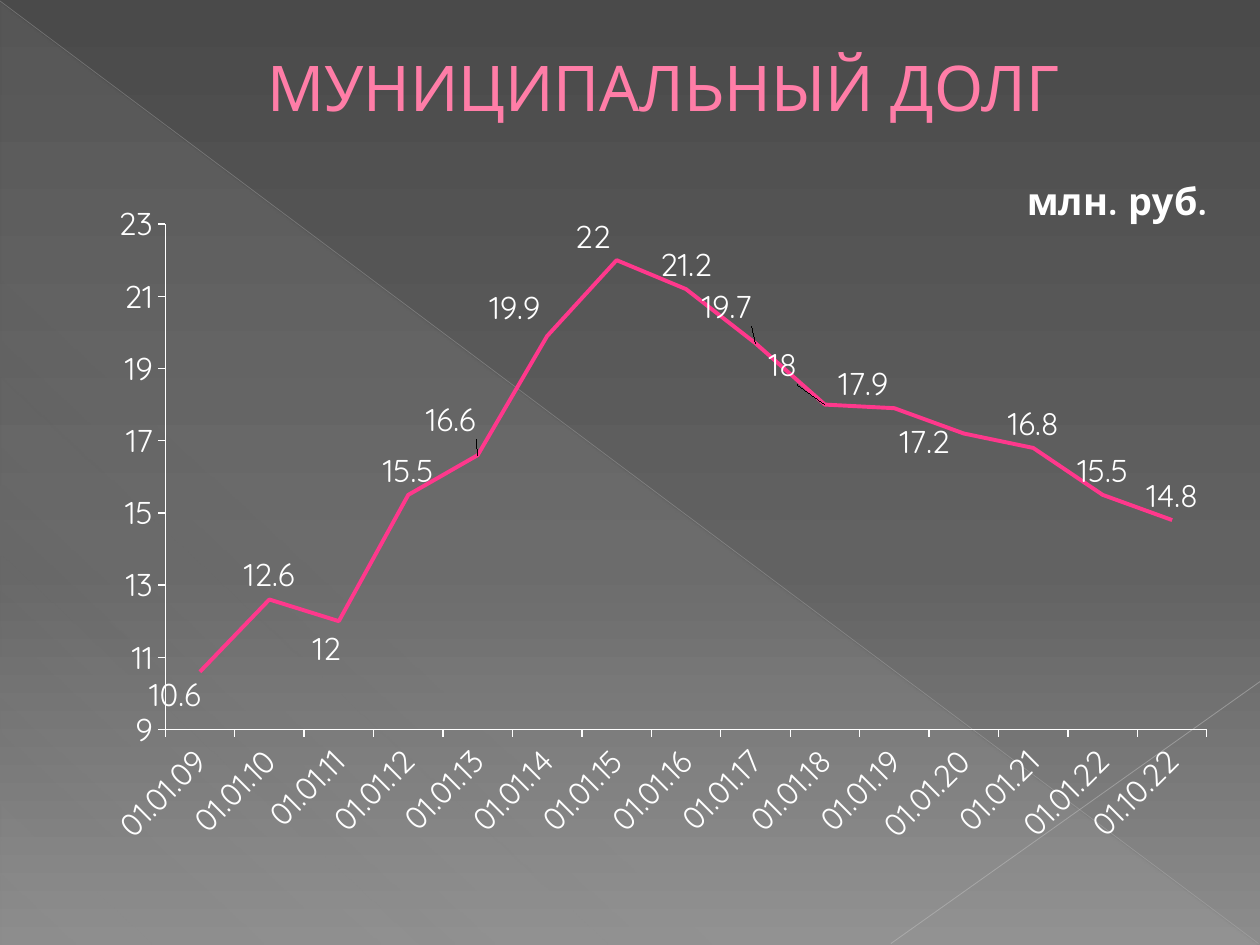
from dataclasses import dataclass

from lxml import etree
from pptx import Presentation
from pptx.chart.data import CategoryChartData
from pptx.dml.color import RGBColor
from pptx.enum.chart import XL_CHART_TYPE, XL_LABEL_POSITION, XL_TICK_MARK
from pptx.enum.shapes import MSO_CONNECTOR, MSO_SHAPE
from pptx.enum.text import MSO_ANCHOR, PP_ALIGN
from pptx.oxml.ns import qn
from pptx.util import Cm, Pt

LINE_CHART = XL_CHART_TYPE.LINE
ABOVE = XL_LABEL_POSITION.ABOVE
OUTSIDE, NO_TICK = XL_TICK_MARK.OUTSIDE, XL_TICK_MARK.NONE
STRAIGHT = MSO_CONNECTOR.STRAIGHT
RIGHT_TRIANGLE = MSO_SHAPE.RIGHT_TRIANGLE
MIDDLE, CENTER = MSO_ANCHOR.MIDDLE, PP_ALIGN.CENTER

DATES = [f"01.01.{year:02d}" for year in range(9, 23)] + ["01.10.22"]
DEBT = [10.6, 12.6, 12, 15.5, 16.6, 19.9, 22, 21.2, 19.7, 18, 17.9, 17.2, 16.8, 15.5, 14.8]
LABEL_SHIFTS = {
    0: (-0.5, 0.97), 2: (-0.24, 1.05), 4: (-0.54, -0.22),
    5: (-0.65, -0.08), 6: (-0.48, 0.02), 8: (-0.58, -0.24),
    9: (-0.85, -0.3), 10: (-0.63, 0), 11: (-0.79, 0.67),
}


@dataclass(frozen=True)
class Theme:
    """Colours, font and type sizes of the deck."""

    font: str = "Quicksand"
    heading: str = "FF7DA7"
    heading_edge: str = "B12761"
    text: str = "FFFFFF"
    debt: str = "FF388C"
    long_ray: str = "BFBFBF"
    short_ray: str = "C6C6C6"
    backdrop: tuple = ((0, "4A4A4A", 100), (60, "626262", 100), (100, "8C8C8C", 100))
    veil: tuple = ((0, "D2D2D2", 10), (70, "D2D2D2", 8), (100, "D2D2D2", 1))
    heading_size: float = 36
    unit_size: float = 21.6
    chart_size: float = 18


def add_child(parent, tag, **attributes):
    """Append a child element with the given attributes."""
    child = etree.SubElement(parent, qn(tag))
    for name, value in attributes.items():
        child.set(name, str(value))
    return child


def set_layout(parent, index, extent, target=None, **lengths):
    """Place a chart part by lengths in centimetres inside the chart extent."""
    for former in parent.findall(qn("c:layout")):
        parent.remove(former)
    layout = etree.Element(qn("c:layout"))
    manual = add_child(layout, "c:manualLayout")
    if target:
        add_child(manual, "c:layoutTarget", val=target)
        add_child(manual, "c:xMode", val="edge")
        add_child(manual, "c:yMode", val="edge")
    for name, length in lengths.items():
        whole = extent[0] if name in "xw" else extent[1]
        add_child(manual, f"c:{name}", val=round(length / whole, 4))
    parent.insert(index, layout)
    return manual


class DebtSlide:
    """Theme and current slide, with a method for each kind of element."""

    def __init__(self, deck, theme):
        self.theme = theme
        self.slide = deck.slides.add_slide(deck.slide_layouts[5])

    def gradient(self, owner, fill, stops, angle):
        """Give a fill its gradient stops and clockwise angle."""
        fill.gradient()
        fill.gradient_angle = 360 - angle
        stop_list = next(owner.iter(qn("a:gsLst")))
        for stop in list(stop_list):
            stop_list.remove(stop)
        for position, color, opacity in stops:
            stop = add_child(stop_list, "a:gs", pos=position * 1000)
            tint = add_child(stop, "a:srgbClr", val=color)
            add_child(tint, "a:alpha", val=opacity * 1000)

    def backdrop(self):
        """Paint the background of the slide."""
        background = self.slide.background
        self.gradient(self.slide.element, background.fill, self.theme.backdrop, 90)

    def veil(self, left, top, width, height):
        """Add the translucent triangle."""
        veil = self.slide.shapes.add_shape(
            RIGHT_TRIANGLE, Cm(left), Cm(top), Cm(width), Cm(height))
        veil.shadow.inherit = False
        veil.line.fill.background()
        self.gradient(veil.element, veil.fill, self.theme.veil, 133)

    def ray(self, start, end, color, weight, opacity):
        """Add a thin translucent line."""
        ray = self.slide.shapes.add_connector(
            STRAIGHT, *(Cm(length) for length in (*start, *end)))
        ray.line.color.rgb = RGBColor.from_string(color)
        ray.line.width = Pt(weight)
        tint = next(ray.element.iter(qn("a:srgbClr")))
        add_child(tint, "a:alpha", val=opacity * 1000)
        add_child(ray.element.spPr, "a:effectLst")

    def style_font(self, font, size, color, bold=False):
        """Apply the deck font with a size and colour."""
        font.name = self.theme.font
        font.size = Pt(size)
        font.bold = bold
        font.color.rgb = RGBColor.from_string(color)

    def heading(self, text, left, top, width, height):
        """Move and fill the title placeholder."""
        heading = self.slide.shapes.title
        heading.element.getparent().append(heading.element)
        heading.left, heading.top = Cm(left), Cm(top)
        heading.width, heading.height = Cm(width), Cm(height)
        frame = heading.text_frame
        frame.vertical_anchor = MIDDLE
        frame.margin_left = Cm(1.6)
        paragraph = frame.paragraphs[0]
        paragraph.alignment = CENTER
        run = paragraph.add_run()
        run.text = text
        self.style_font(run.font, self.theme.heading_size, self.theme.heading)
        properties = next(heading.element.iter(qn("a:rPr")))
        edge = etree.Element(qn("a:ln"), w=str(Pt(0.5)))
        edge_fill = add_child(edge, "a:solidFill")
        add_child(edge_fill, "a:srgbClr", val=self.theme.heading_edge)
        properties.insert(0, edge)

    def axis(self, axis):
        """Style the line, ticks and labels of an axis."""
        axis.has_major_gridlines = False
        axis.major_tick_mark, axis.minor_tick_mark = OUTSIDE, NO_TICK
        axis.format.line.color.rgb = RGBColor.from_string(self.theme.text)
        axis.format.line.width = Pt(0.75)
        self.style_font(axis.tick_labels.font, self.theme.chart_size, self.theme.text)

    def debt_chart(self, unit, left, top, width, height):
        """Add the line chart of the debt."""
        extent = (width, height)
        figures = CategoryChartData()
        figures.categories = DATES
        figures.add_series("Series 1", DEBT)
        chart = self.slide.shapes.add_chart(
            LINE_CHART, Cm(left), Cm(top), Cm(width), Cm(height), figures).chart
        self.style_font(chart.font, self.theme.chart_size, self.theme.text)
        chart.has_legend = False

        run = chart.chart_title.text_frame.paragraphs[0].add_run()
        run.text = unit
        self.style_font(run.font, self.theme.unit_size, self.theme.text, bold=True)
        title = chart.element.chart.find(qn("c:title"))
        manual = set_layout(title, 1, extent, "inner", x=19.85, y=0.42)
        manual.remove(manual.find(qn("c:layoutTarget")))
        set_layout(chart.element.chart.plotArea, 0, extent, "inner",
                   x=2.62, y=1.6, w=21, h=10.19)

        self.axis(chart.category_axis)
        self.axis(chart.value_axis)
        chart.value_axis.minimum_scale, chart.value_axis.maximum_scale = 9, 23
        chart.value_axis.major_unit = 2
        dates = chart.element.chart.plotArea.find(qn("c:catAx"))
        next(dates.iter(qn("a:bodyPr"))).set("rot", str(-45 * 60000))

        chart.plots[0].vary_by_categories = False
        debt = chart.plots[0].series[0]
        debt.smooth = False
        debt.format.line.color.rgb = RGBColor.from_string(self.theme.debt)
        debt.format.line.width = Pt(2.25)
        labels = debt.data_labels
        labels.show_value = True
        labels.position = ABOVE
        self.style_font(labels.font, self.theme.chart_size, self.theme.text)
        for index in LABEL_SHIFTS:
            label = debt.points[index].data_label
            label.position = ABOVE
            self.style_font(label.font, self.theme.chart_size, self.theme.text)
        for label, (x, y) in zip(chart.element.iter(qn("c:dLbl")), LABEL_SHIFTS.values()):
            set_layout(label, 1, extent, x=x, y=y)


def main():
    """Build and save the slide."""
    deck = Presentation()
    deck.slide_width, deck.slide_height = Cm(25.4), Cm(19.05)
    theme = Theme()
    page = DebtSlide(deck, theme)
    page.backdrop()
    page.veil(0.02, 0.05, 25.35, 19)
    page.ray((0, 0.02), (25.37, 19.02), theme.long_ray, 0.39, 35)
    page.ray((25.4, 13.74), (17.96, 19.02), theme.short_ray, 0.47, 45)
    page.heading("МУНИЦИПАЛЬНЫЙ ДОЛГ", 1.27, 0.74, 22.86, 1.98)
    page.debt_chart("млн. руб.", 0.71, 2.92, 24, 14.81)
    deck.save("out.pptx")


if __name__ == "__main__":
    main()
